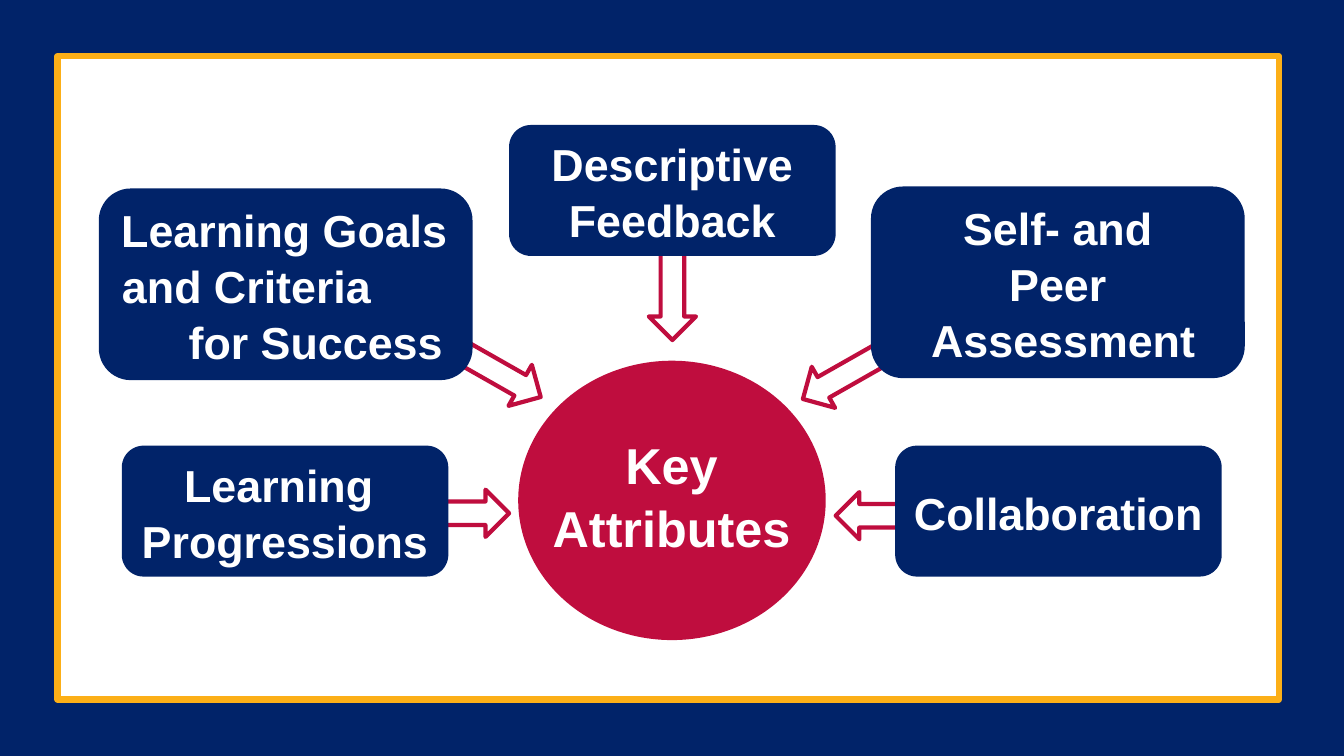
"""Build the Key Attributes slide: five topics pointing at a central hub."""
from typing import NamedTuple

from pptx import Presentation
from pptx.dml.color import RGBColor
from pptx.enum.shapes import MSO_SHAPE as Preset
from pptx.enum.text import MSO_ANCHOR as Anchor, PP_ALIGN as Align
from pptx.shapes.autoshape import Shape
from pptx.slide import Slide
from pptx.util import Cm, Pt

NAVY = RGBColor(0x01, 0x23, 0x69)
GOLD = RGBColor(0xFC, 0xAF, 0x17)
CRIMSON = RGBColor(0xBF, 0x0D, 0x3E)
WHITE = RGBColor(0xFF, 0xFF, 0xFF)

FONT = "Arial"
LINE_SPACING = 1.04
ARROW_HEIGHT = 1.19


class Area(NamedTuple):
    left: float
    top: float
    width: float
    height: float


class Arrow(NamedTuple):
    left: float
    top: float
    length: float
    rotation: float


class Topic(NamedTuple):
    wording: str
    area: Area
    arrow: Arrow
    indents: tuple[float, ...] = ()


SMALL = (8.23, 3.3)
LARGE = (9.42, 4.83)

FRAME = Area(1.45, 1.42, 30.78, 16.21)
HUB = Area(13.06, 9.09, 7.75, 7.04)
HUB_LABEL = Area(13.46, 10.8, 6.93, 3.33)
TOPICS = (
    Topic("Learning \nProgressions", Area(3.07, 11.23, *SMALL),
          Arrow(11.05, 12.34, 1.78, 0)),
    Topic("Learning Goals\nand Criteria\nfor Success", Area(2.49, 4.75, *LARGE),
          Arrow(11.28, 8.79, 2.51, 29.6), (0.08, 0.1, 1.78)),
    Topic("Descriptive\nFeedback", Area(12.83, 3.15, *SMALL),
          Arrow(15.8, 6.83, 2.29, 90)),
    Topic("Self- and\nPeer\n Assessment", Area(21.95, 4.7, *LARGE),
          Arrow(20.07, 8.84, 2.51, 150.4)),
    Topic("Collaboration", Area(22.56, 11.23, *SMALL),
          Arrow(21.06, 12.4, 1.78, 180)),
)


def add_filled(slide: Slide, preset: Preset, area: Area, fill: RGBColor,
               line: RGBColor | None = None, weight: float = 0) -> Shape:
    """Add a flat preset shape, outlined only when a line colour is given."""
    shape = slide.shapes.add_shape(preset, *map(Cm, area))
    shape.shadow.inherit = False
    shape.fill.solid()
    shape.fill.fore_color.rgb = fill
    if line is None:
        shape.line.fill.background()
    else:
        shape.line.color.rgb = line
        shape.line.width = Pt(weight)
    return shape


def write(shape: Shape, wording: str, size: int,
          indents: tuple[float, ...] = ()) -> None:
    """Write bold white lines, centred or stepped in by the given indents."""
    frame = shape.text_frame
    frame.text = wording
    frame.word_wrap = True
    frame.vertical_anchor = Anchor.MIDDLE
    for paragraph in frame.paragraphs:
        paragraph.alignment = Align.LEFT if indents else Align.CENTER
        paragraph.line_spacing = LINE_SPACING
        for run in paragraph.runs:
            run.font.name = FONT
            run.font.size = Pt(size)
            run.font.bold = True
            run.font.color.rgb = WHITE
    for paragraph, indent in zip(frame.paragraphs, indents):
        paragraph._p.get_or_add_pPr().set("marL", str(Cm(indent)))


def add_topic(slide: Slide, topic: Topic) -> None:
    """Draw the arrow of a topic and its box on top."""
    arrow = topic.arrow
    pointer = add_filled(
        slide, Preset.RIGHT_ARROW,
        Area(arrow.left, arrow.top, arrow.length, ARROW_HEIGHT),
        WHITE, CRIMSON, 3)
    pointer.rotation = arrow.rotation
    box = add_filled(slide, Preset.ROUNDED_RECTANGLE, topic.area, NAVY)
    write(box, topic.wording, 32, topic.indents)


def main() -> None:
    """Assemble and save the slide."""
    deck = Presentation()
    deck.slide_width, deck.slide_height = Cm(33.87), Cm(19.05)
    slide = deck.slides.add_slide(deck.slide_layouts[6])
    slide.background.fill.solid()
    slide.background.fill.fore_color.rgb = NAVY

    add_filled(slide, Preset.RECTANGLE, FRAME, WHITE, GOLD, 4.5)
    add_filled(slide, Preset.FLOWCHART_CONNECTOR, HUB, CRIMSON)
    write(slide.shapes.add_textbox(*map(Cm, HUB_LABEL)), "Key\nAttributes", 36)
    for topic in TOPICS:
        add_topic(slide, topic)

    deck.save("out.pptx")


if __name__ == "__main__":
    main()
